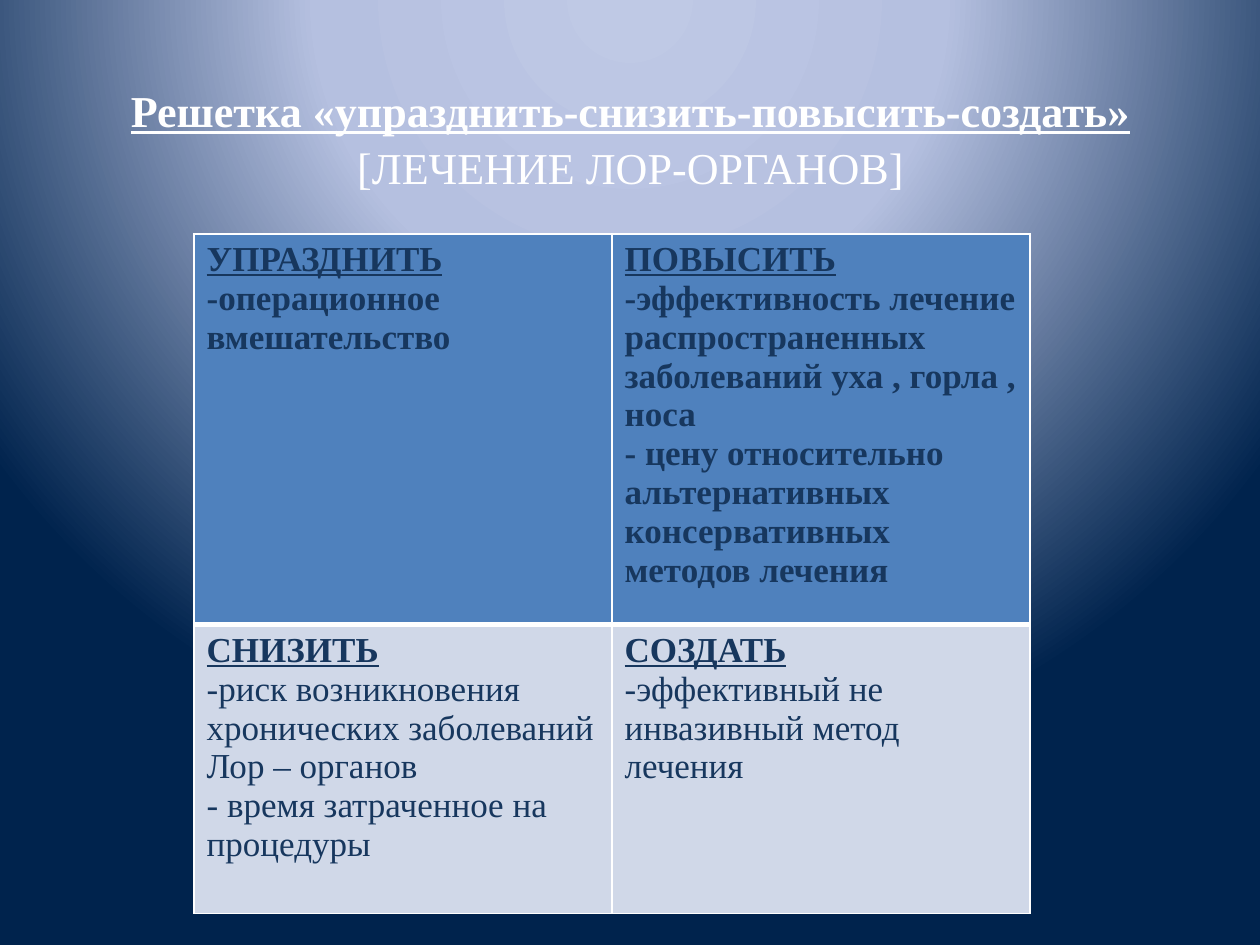
from dataclasses import dataclass

from lxml import etree
from pptx import Presentation
from pptx import util as u
from pptx.dml.color import RGBColor
from pptx.enum import text
from pptx.oxml import parse_xml
from pptx.oxml.ns import nsdecls, qn

EMU_PER_PX = 914400 / 126
FONT = "Times New Roman"
WHITE = "FFFFFF"
NAVY = "17375E"
BLUE = "4F81BD"
PALE = "D0D8E8"


@dataclass
class Quadrant:
    row: int
    column: int
    heading: str
    points: list[str]


QUADRANTS = [
    Quadrant(0, 0, "УПРАЗДНИТЬ", ["-операционное вмешательство"]),
    Quadrant(0, 1, "ПОВЫСИТЬ", [
        "-эффективность лечение распространенных заболеваний уха , горла , носа",
        "- цену относительно альтернативных консервативных методов лечения",
    ]),
    Quadrant(1, 0, "СНИЗИТЬ", [
        "-риск возникновения хронических заболеваний",
        "Лор – органов",
        "- время затраченное на процедуры",
    ]),
    Quadrant(1, 1, "СОЗДАТЬ", ["-эффективный не инвазивный метод лечения"]),
]


def px(length: int) -> int:
    return round(length * EMU_PER_PX)


def color(value: str) -> RGBColor:
    return RGBColor.from_string(value)


def format_run(run, size: float, fill: str, bold: bool, underline: bool) -> None:
    run.font.name = FONT
    run.font.size = u.Pt(size)
    run.font.color.rgb = color(fill)
    run.font.bold = bold
    run.font.underline = underline


def paint_background(slide) -> None:
    slide.background.fill.solid()
    properties = slide.background._cSld.find(qn("p:bg")).find(qn("p:bgPr"))
    stops = "".join(
        f'<a:gs pos="{position * 1000}"><a:srgbClr val="{value}"/></a:gs>'
        for position, value in [(0, "BFC9E5"), (40, "B5C0E0"), (100, "00234D")]
    )
    gradient = parse_xml(
        f'<a:gradFill {nsdecls("a")} rotWithShape="1"><a:gsLst>{stops}</a:gsLst>'
        '<a:path path="circle"><a:fillToRect l="50000" t="-80000" r="50000" b="180000"/>'
        "</a:path></a:gradFill>"
    )
    properties.replace(properties.find(qn("a:solidFill")), gradient)


def draw_title(slide) -> None:
    frame = slide.shapes.add_textbox(px(95), px(55), px(1071), px(163)).text_frame
    frame.word_wrap = True
    frame.vertical_anchor = text.MSO_ANCHOR.MIDDLE
    frame.text = "Решетка «упразднить-снизить-повысить-создать»\v[ЛЕЧЕНИЕ ЛОР-ОРГАНОВ]"
    paragraph = frame.paragraphs[0]
    paragraph.alignment = text.PP_ALIGN.CENTER
    paragraph.line_spacing = 1.07
    for run, emphasized in zip(paragraph.runs, [True, False]):
        format_run(run, 25.2, WHITE, emphasized, emphasized)


def set_borders(cell, bottom_width: int) -> None:
    properties = cell._tc.get_or_add_tcPr()
    for index, (side, width) in enumerate(
        [("L", 1), ("R", 1), ("T", 1), ("B", bottom_width)]
    ):
        line = etree.Element(qn(f"a:ln{side}"), w=str(u.Pt(width)))
        fill = etree.SubElement(line, qn("a:solidFill"))
        etree.SubElement(fill, qn("a:srgbClr"), val=WHITE)
        properties.insert(index, line)


def draw_quadrant(table, quadrant: Quadrant) -> None:
    cell = table.cell(quadrant.row, quadrant.column)
    is_top = quadrant.row == 0
    cell.fill.solid()
    cell.fill.fore_color.rgb = color(BLUE if is_top else PALE)
    set_borders(cell, 3 if is_top else 1)
    cell.text_frame.text = "\n".join([quadrant.heading, *quadrant.points])
    for index, paragraph in enumerate(cell.text_frame.paragraphs):
        is_heading = index == 0
        format_run(paragraph.runs[0], 20, NAVY, is_top or is_heading, is_heading)


def draw_table(slide) -> None:
    table = slide.shapes.add_table(2, 2, px(194), px(234), px(836), px(578)).table
    for quadrant in QUADRANTS:
        draw_quadrant(table, quadrant)


def main() -> None:
    presentation = Presentation()
    presentation.slide_width = px(1260)
    presentation.slide_height = px(945)
    slide = presentation.slides.add_slide(presentation.slide_layouts[6])
    paint_background(slide)
    draw_title(slide)
    draw_table(slide)
    presentation.save("out.pptx")


if __name__ == "__main__":
    main()
